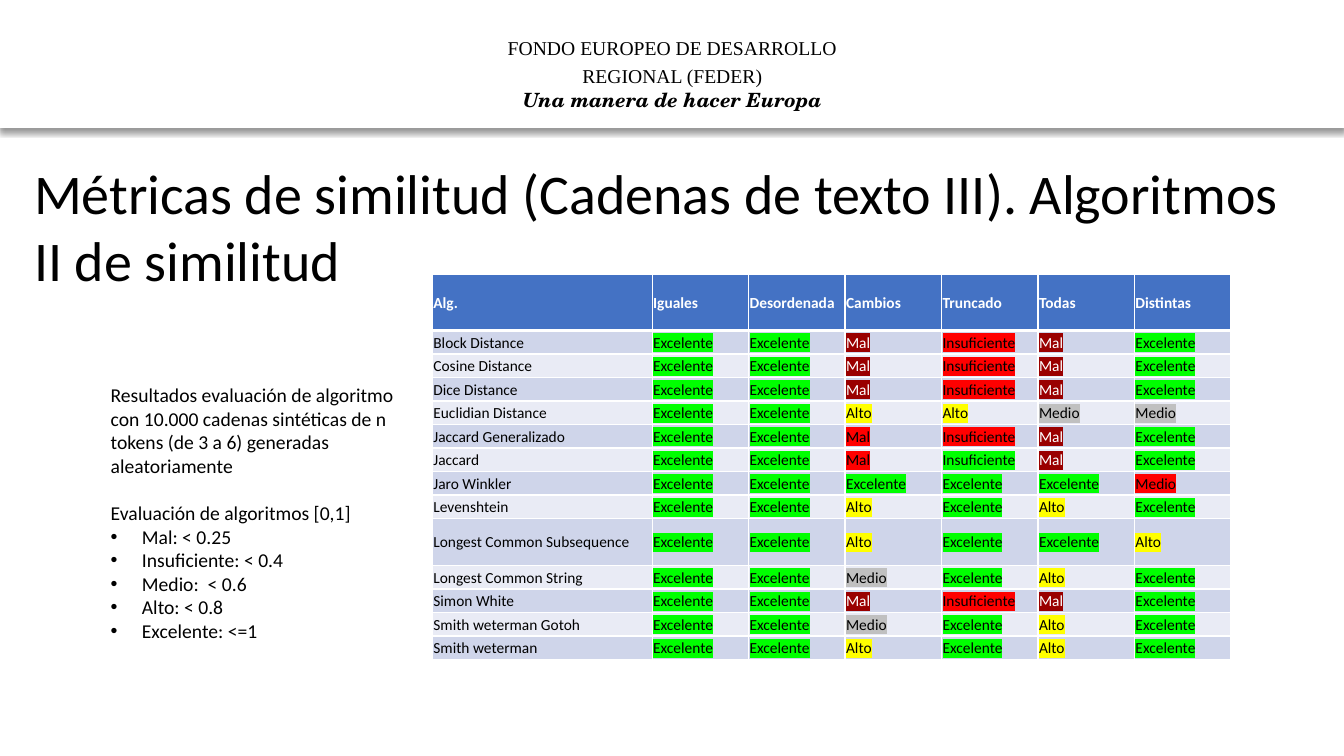
from dataclasses import dataclass

from lxml import etree
from pptx import Presentation
from pptx import util as u
from pptx.dml.color import RGBColor
from pptx.enum import shapes, text
from pptx.oxml import parse_xml
from pptx.oxml.ns import qn

COLORS = {
    "white": "FFFFFF", "black": "000000", "header": "4472C4",
    "odd row": "CFD5EA", "even row": "E9EBF5",
    "green": "00FF00", "yellow": "FFFF00", "gray": "C0C0C0",
    "red": "FF0000", "dark red": "9A0000",
}
WIDTH, HEIGHT = u.Inches(13.333), u.Inches(7.5)
NAMESPACE = 'xmlns:a="http://schemas.openxmlformats.org/drawingml/2006/main"'


@dataclass(frozen=True)
class Area:
    """A rectangle in percent of the slide's width and height."""
    left: float
    top: float
    width: float
    height: float

    def emu(self) -> tuple[int, int, int, int]:
        return (across(self.left), down(self.top),
                across(self.width), down(self.height))


@dataclass(frozen=True)
class Line:
    words: str
    size: float = 14
    font: str = "Calibri"
    color: str = "black"
    bold: bool = False
    italic: bool = False
    centered: bool = False
    spacing: float = 1.0
    before: float = 0
    bullet: bool = False


@dataclass(frozen=True)
class Rating:
    words: str
    highlight: str
    color: str = "black"


@dataclass(frozen=True)
class Algorithm:
    """One table row; each letter of grades is a key of RATINGS."""
    name: str
    grades: str
    lines: int = 1


RATINGS = {
    "E": Rating("Excelente", "green"),
    "A": Rating("Alto", "yellow"),
    "M": Rating("Medio", "gray"),
    "m": Rating("Medio", "red"),
    "I": Rating("Insuficiente", "red"),
    "i": Rating("Insuficiente", "green"),
    "B": Rating("Mal", "dark red", "white"),
    "b": Rating("Mal", "red"),
}
HEADINGS = ["Alg.", "Iguales", "Desordenada", "Cambios", "Truncado", "Todas", "Distintas"]
ALGORITHMS = [
    Algorithm("Block Distance", "EEBIBE"),
    Algorithm("Cosine Distance", "EEBIBE"),
    Algorithm("Dice Distance", "EEBIBE"),
    Algorithm("Euclidian Distance", "EEAAMM"),
    Algorithm("Jaccard Generalizado", "EEbIBE"),
    Algorithm("Jaccard", "EEbiBE"),
    Algorithm("Jaro Winkler", "EEEEEm"),
    Algorithm("Levenshtein", "EEAEAE"),
    Algorithm("Longest Common Subsequence", "EEAEEA", lines=2),
    Algorithm("Longest Common String", "EEMEAE"),
    Algorithm("Simon White", "EEBIBE"),
    Algorithm("Smith weterman Gotoh", "EEMEAE"),
    Algorithm("Smith weterman", "EEAEAE"),
]
NAME_COLUMN, GRADE_COLUMN = 16.35, 7.18
ROW, HEADER_ROWS = 3.11, 2.4

BANNER = Area(0, 0, 100, 16.8)
FUND = Area(33.45, 3.47, 33.15, 12)
TITLE = Area(1.8, 20.27, 96.45, 19.33)
RESULTS = Area(7.5, 50, 23.63, 42.67)
COMPARISON = Area(
    32.17, 36.27, NAME_COLUMN + GRADE_COLUMN * (len(HEADINGS) - 1),
    ROW * (HEADER_ROWS + sum(algorithm.lines for algorithm in ALGORITHMS)))

FUND_LINES = [
    Line("FONDO EUROPEO DE DESARROLLO REGIONAL (FEDER)",
         font="Times New Roman", centered=True, spacing=1.2),
    Line("Una manera de hacer Europa", font="TeX Gyre Schola",
         bold=True, italic=True, centered=True),
]
TITLE_LINES = [
    Line("Métricas de similitud (Cadenas de texto III). Algoritmos II de similitud", size=40),
]
THRESHOLDS = ["Mal: < 0.25", "Insuficiente: < 0.4", "Medio:  < 0.6",
              "Alto: < 0.8", "Excelente: <=1"]
RESULT_LINES = [
    Line("Resultados evaluación de algoritmo con 10.000 cadenas sintéticas de n "
         "tokens (de 3 a 6) generadas aleatoriamente"),
    Line("Evaluación de algoritmos [0,1]", before=17),
    *(Line(threshold, bullet=True) for threshold in THRESHOLDS),
]


def across(percent: float) -> int:
    return round(WIDTH * percent / 100)


def down(percent: float) -> int:
    return round(HEIGHT * percent / 100)


def rgb(name: str) -> RGBColor:
    return RGBColor.from_string(COLORS[name])


def write(paragraph, line: Line):
    """Fill a paragraph with a line and return its run."""
    run = paragraph.add_run()
    run.text = line.words
    if line.bullet:
        properties = paragraph._p.get_or_add_pPr()
        properties.set("marL", str(u.Inches(0.31)))
        properties.set("indent", str(-u.Inches(0.31)))
        properties.append(parse_xml(f'<a:buFont {NAMESPACE} typeface="Arial"/>'))
        properties.append(parse_xml(f'<a:buChar {NAMESPACE} char="•"/>'))
    if line.centered:
        paragraph.alignment = text.PP_ALIGN.CENTER
    if line.spacing != 1:
        paragraph.line_spacing = line.spacing
    if line.before:
        paragraph.space_before = u.Pt(line.before)
    font = paragraph.font
    font.name, font.size = line.font, u.Pt(line.size)
    font.bold, font.italic = line.bold, line.italic
    font.color.rgb = rgb(line.color)
    return run


def add_banner(slide) -> None:
    banner = slide.shapes.add_shape(shapes.MSO_SHAPE.RECTANGLE, *BANNER.emu())
    banner.fill.solid()
    banner.fill.fore_color.rgb = rgb("white")
    banner.line.color.rgb = rgb("white")
    banner.line.width = u.Pt(1)
    banner.shadow.inherit = False
    banner._element.spPr.find(qn("a:effectLst")).append(parse_xml(
        f'<a:outerShdw {NAMESPACE} blurRad="{u.Pt(4)}" dist="{u.Pt(3)}" dir="5400000">'
        f'<a:srgbClr val="{COLORS["black"]}"><a:alpha val="40000"/></a:srgbClr></a:outerShdw>'))


def add_lines(slide, area: Area, lines: list[Line]) -> None:
    frame = slide.shapes.add_textbox(*area.emu()).text_frame
    frame.word_wrap = True
    frame.auto_size = text.MSO_AUTO_SIZE.SHAPE_TO_FIT_TEXT
    for number, line in enumerate(lines):
        write(frame.add_paragraph() if number else frame.paragraphs[0], line)


def fill_cell(cell, line: Line, fill: str, top: int, bottom: int, highlight: str = "") -> None:
    """Write one table cell; top and bottom are border widths in points."""
    cell.margin_left = cell.margin_top = cell.margin_right = u.Inches(0.01)
    cell.margin_bottom = 0
    cell.vertical_anchor = text.MSO_ANCHOR.MIDDLE
    for side, width in {"L": 1, "R": 1, "T": top, "B": bottom}.items():
        cell._tc.get_or_add_tcPr().append(parse_xml(
            f'<a:ln{side} {NAMESPACE} w="{u.Pt(width)}"><a:solidFill>'
            f'<a:srgbClr val="{COLORS["white"]}"/></a:solidFill></a:ln{side}>'))
    cell.fill.solid()
    cell.fill.fore_color.rgb = rgb(fill)
    run = write(cell.text_frame.paragraphs[0], line)
    if highlight:
        mark = etree.SubElement(run._r.get_or_add_rPr(), qn("a:highlight"))
        etree.SubElement(mark, qn("a:srgbClr"), val=COLORS[highlight])


def add_comparison(slide) -> None:
    table = slide.shapes.add_table(
        len(ALGORITHMS) + 1, len(HEADINGS), *COMPARISON.emu()).table
    table.horz_banding = False
    for number, column in enumerate(table.columns):
        column.width = across(GRADE_COLUMN if number else NAME_COLUMN)
    table.rows[0].height = down(ROW * HEADER_ROWS)
    for number, heading in enumerate(HEADINGS):
        fill_cell(table.cell(0, number), Line(heading, 11, color="white", bold=True),
                  "header", 1, 3)
    for row, algorithm in enumerate(ALGORITHMS, start=1):
        table.rows[row].height = down(ROW * algorithm.lines)
        fill = "odd row" if row % 2 else "even row"
        top = 3 if row == 1 else 1
        fill_cell(table.cell(row, 0), Line(algorithm.name, 11), fill, top, 1)
        for column, grade in enumerate(algorithm.grades, start=1):
            rating = RATINGS[grade]
            fill_cell(table.cell(row, column), Line(rating.words, 11, color=rating.color),
                      fill, top, 1, rating.highlight)


def main() -> None:
    deck = Presentation()
    deck.slide_width, deck.slide_height = WIDTH, HEIGHT
    slide = deck.slides.add_slide(deck.slide_layouts[6])
    add_banner(slide)
    add_lines(slide, FUND, FUND_LINES)
    add_lines(slide, TITLE, TITLE_LINES)
    add_comparison(slide)
    add_lines(slide, RESULTS, RESULT_LINES)
    deck.save("out.pptx")


if __name__ == "__main__":
    main()
